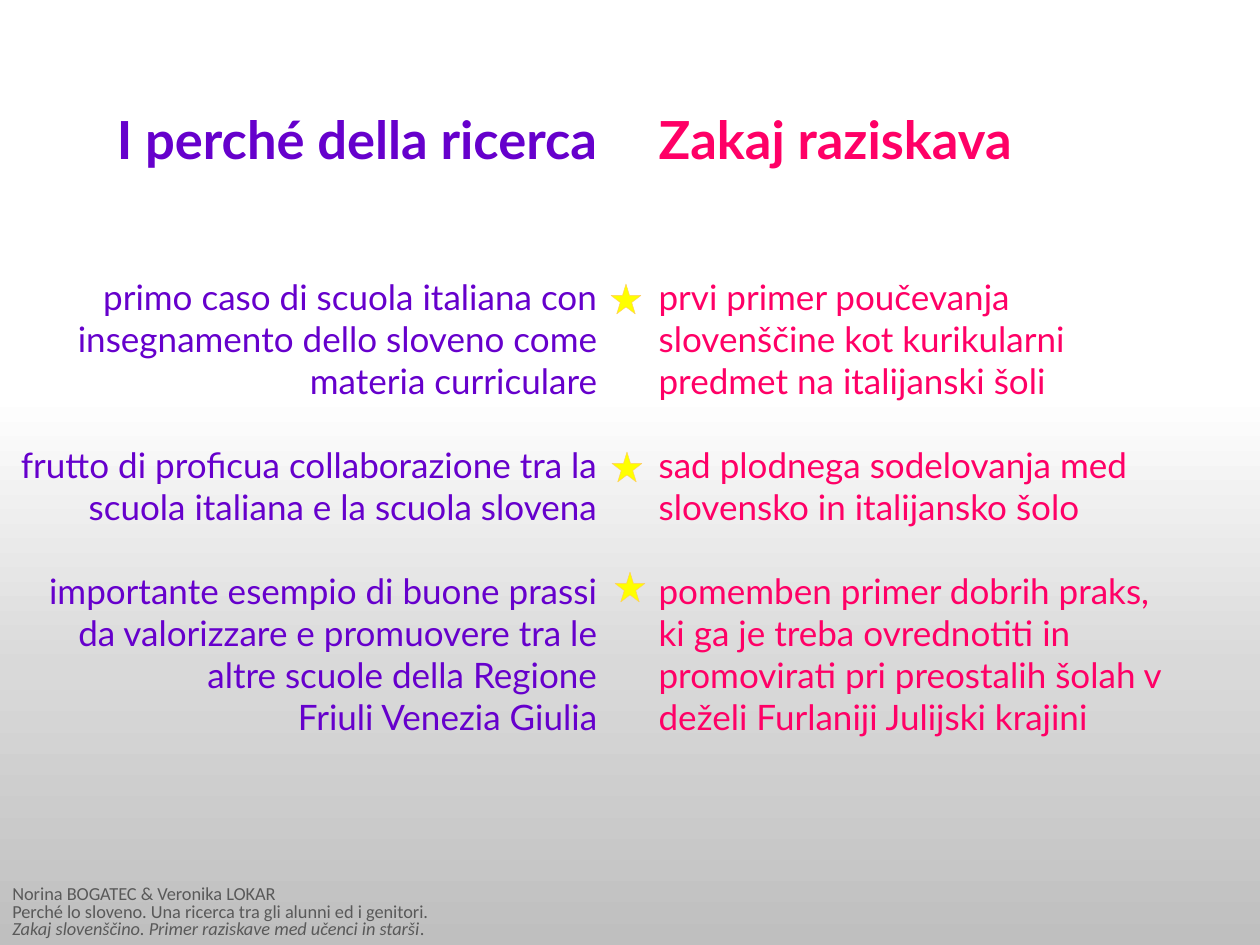
import pptx
import pptx.util
import pptx.oxml
import pptx.oxml.ns
import pptx.dml.color
import pptx.enum.shapes
import pptx.enum.text

Pt = pptx.util.Pt
Align = pptx.enum.text.PP_ALIGN
Shape = pptx.enum.shapes.MSO_SHAPE
HUES = {"violet": "6600CC", "pink": "FF0066", "star": "FFFF00",
        "edge": "FFCC66", "grey": "595959"}
FADE = {0: "FFFFFF", 50: "D9D9D9", 100: "BFBFBF"}


def px(*nums):
    """Turn pixels (126 to the inch) into EMU."""
    return [round(n * 914400 / 126) for n in nums]


def tint(name):
    return pptx.dml.color.RGBColor.from_string(HUES[name])


deck = pptx.Presentation()
deck.slide_width, deck.slide_height = px(1260, 945)
slide = deck.slides.add_slide(deck.slide_layouts[3])
shapes = slide.shapes
title = shapes.title._element
title.getparent().remove(title)

# Grey fade behind the lower part
fade = shapes.add_shape(Shape.RECTANGLE, *px(0, 393, 1260, 552))
fade.shadow.inherit = False
fade.line.fill.background()
stops = "".join(f'<a:gs pos="{pos * 1000}"><a:srgbClr val="{hue}"/></a:gs>'
                for pos, hue in FADE.items())
grad = pptx.oxml.parse_xml(
    f'<a:gradFill {pptx.oxml.ns.nsdecls("a")} rotWithShape="1">'
    f'<a:gsLst>{stops}</a:gsLst><a:lin ang="5400000" scaled="0"/></a:gradFill>')
fade._element.spPr.find(pptx.oxml.ns.qn("a:prstGeom")).addnext(grad)
shapes._spTree.insert(2, fade._element)

# Italian and Slovene columns: a heading, then three reasons
columns = [
    ((0, 101, 610, 724), "violet", Align.RIGHT, [
        "I perché della ricerca",
        "primo caso di scuola italiana con insegnamento dello sloveno come "
        "materia curriculare",
        "frutto di proficua collaborazione tra la scuola italiana e la scuola "
        "slovena",
        "importante esempio di buone prassi da valorizzare e promuovere tra le "
        "altre scuole della Regione\vFriuli Venezia Giulia"]),
    ((646, 101, 547, 724), "pink", Align.LEFT, [
        "Zakaj raziskava",
        "prvi primer poučevanja slovenščine kot kurikularni predmet na "
        "italijanski šoli",
        "sad plodnega sodelovanja med slovensko in italijansko šolo",
        "pomemben primer dobrih praks, ki ga je treba ovrednotiti in "
        "promovirati pri preostalih šolah v deželi Furlaniji Julijski krajini"]),
]
gaps = [0, 60, 24, 24]
for body, (box, hue, side, lines) in zip(list(slide.placeholders), columns):
    body.left, body.top, body.width, body.height = px(*box)
    frame = body.text_frame
    frame.text = "\n".join(lines)
    frame.auto_size = pptx.enum.text.MSO_AUTO_SIZE.NONE
    for row, (para, gap) in enumerate(zip(frame.paragraphs, gaps)):
        para.alignment = side
        para.space_before = Pt(gap)
        para.font.name = "Lato"
        para.font.size = Pt(20 if row else 30)
        para.font.bold = row == 0
        para.font.color.rgb = tint(hue)
        props = para._p.get_or_add_pPr()
        props.set("marL", "0")
        props.set("indent", "0")
        none = pptx.oxml.parse_xml(f'<a:buNone {pptx.oxml.ns.nsdecls("a")}/>')
        props.find(pptx.oxml.ns.qn("a:spcBef")).addnext(none)

# Credits
foot = shapes.add_textbox(*px(0, 883, 1260, 60)).text_frame
foot.word_wrap = True
foot.vertical_anchor = pptx.enum.text.MSO_ANCHOR.MIDDLE
foot.text = ("Norina BOGATEC & Veronika LOKAR\n"
             "Perché lo sloveno. Una ricerca tra gli alunni ed i genitori.\n"
             "Zakaj slovenščino. Primer raziskave med učenci in starši")
for para in foot.paragraphs:
    para.line_spacing = Pt(10)
    para.font.name = "Calibri"
    para.font.size = Pt(10.5)
    para.font.color.rgb = tint("grey")
para.runs[0].font.italic = True
para.add_run().text = "."

# A star beside each reason
for left, top in [(611, 284), (612, 452), (615, 572)]:
    star = shapes.add_shape(Shape.STAR_5_POINT, *px(left, top, 30, 30))
    star.shadow.inherit = False
    star.fill.solid()
    star.fill.fore_color.rgb = tint("star")
    star.line.color.rgb = tint("edge")
    star.line.width = Pt(0.25)

deck.save("out.pptx")
